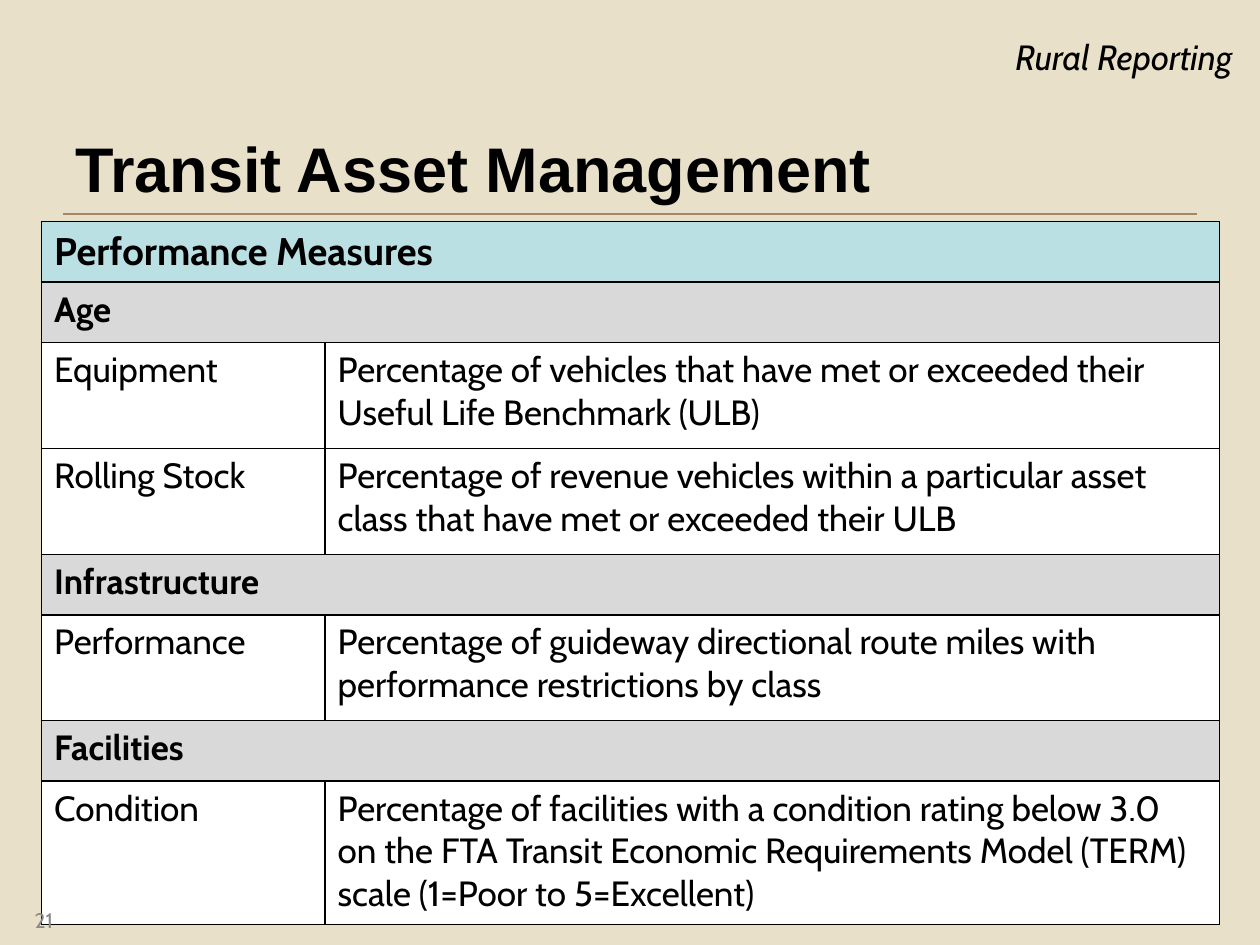
from lxml import etree
from pptx import Presentation
from pptx.dml.color import RGBColor
from pptx.enum.shapes import MSO_CONNECTOR
from pptx.enum.text import MSO_ANCHOR, PP_ALIGN
from pptx.oxml.ns import qn
from pptx.util import Inches, Pt

LEFT, RIGHT = PP_ALIGN.LEFT, PP_ALIGN.RIGHT
TOP, MIDDLE = MSO_ANCHOR.TOP, MSO_ANCHOR.MIDDLE
STRAIGHT = MSO_CONNECTOR.STRAIGHT
COLORS = {
    "background": "E9E0C9",
    "rule": "A38769",
    "text": "000000",
    "number": "898989",
    "header": "BBE0E3",
    "section": "D9D9D9",
    "measure": "FFFFFF",
    "border": "000000",
}
BODY_FONT, TITLE_FONT = "Cabin", "Arial"
COLUMN_WIDTHS = (2.25, 7.1)
MEASURES = [
    ("header", 0.48, ["Performance Measures"]),
    ("section", 0.48, ["Age"]),
    ("measure", 0.84, ["Equipment",
                       "Percentage of vehicles that have met or exceeded their "
                       "Useful Life Benchmark (ULB)"]),
    ("measure", 0.84, ["Rolling Stock",
                       "Percentage of revenue vehicles within a particular asset "
                       "class that have met or exceeded their ULB"]),
    ("section", 0.48, ["Infrastructure"]),
    ("measure", 0.84, ["Performance",
                       "Percentage of guideway directional route miles with "
                       "performance restrictions by class"]),
    ("section", 0.48, ["Facilities"]),
    ("measure", 1.14, ["Condition",
                       "Percentage of facilities with a condition rating below 3.0 "
                       "on the FTA Transit Economic Requirements Model (TERM) "
                       "scale (1=Poor to 5=Excellent)"]),
]


def color(name):
    """Return the named colour."""
    return RGBColor.from_string(COLORS[name])


def write(frame, text, size, font=BODY_FONT, ink="text", bold=False, italic=False, align=LEFT):
    """Put one formatted paragraph in a text frame."""
    frame.text = text
    para = frame.paragraphs[0]
    para.alignment = align
    span = para.runs[0]
    span.font.name = font
    span.font.size = Pt(size)
    span.font.bold = bold
    span.font.italic = italic
    span.font.color.rgb = color(ink)


def add_label(page, bounds, text, size, anchor=MIDDLE, **style):
    """Add a wrapped text box within the given bounds."""
    box = page.shapes.add_textbox(*map(Inches, bounds))
    frame = box.text_frame
    frame.word_wrap = True
    frame.vertical_anchor = anchor
    write(frame, text, size, **style)


def add_heading(page, left, top, width, height):
    """Add the title and the rule under it."""
    add_label(page, (left, top, width, height), "Transit Asset Management", 36,
              font=TITLE_FONT, bold=True)
    rule_top = Inches(top + height - 0.08)
    rule = page.shapes.add_connector(STRAIGHT, Inches(left), rule_top,
                                     Inches(left + width), rule_top)
    rule.line.color.rgb = color("rule")
    rule.line.width = Pt(1)
    etree.SubElement(rule._element.spPr, qn("a:effectLst"))


def add_borders(cell):
    """Draw a thin border on each side of a cell."""
    properties = cell._tc.get_or_add_tcPr()
    for index, side in enumerate(("a:lnL", "a:lnR", "a:lnT", "a:lnB")):
        line = etree.Element(qn(side), w=str(Pt(1)))
        fill = etree.SubElement(line, qn("a:solidFill"))
        etree.SubElement(fill, qn("a:srgbClr"), val=COLORS["border"])
        properties.insert(index, line)


def add_measures(page, left, top):
    """Add the table of performance measures."""
    heights = [height for _, height, _ in MEASURES]
    table = page.shapes.add_table(
        len(MEASURES), len(COLUMN_WIDTHS), Inches(left), Inches(top),
        Inches(sum(COLUMN_WIDTHS)), Inches(sum(heights))).table
    table.first_row = False
    table.horz_banding = False
    for column, width in zip(table.columns, COLUMN_WIDTHS):
        column.width = Inches(width)
    for row, (kind, height, texts) in zip(table.rows, MEASURES):
        row.height = Inches(height)
        cells = list(row.cells)
        for cell in cells:
            cell.fill.solid()
            cell.fill.fore_color.rgb = color(kind)
            add_borders(cell)
        if len(texts) == 1:
            cells[0].merge(cells[-1])
        for cell, text in zip(cells, texts):
            write(cell.text_frame, text, 22 if kind == "header" else 20,
                  bold=kind != "measure")


def main():
    """Build the slide and save it."""
    deck = Presentation()
    deck.slide_width, deck.slide_height = Inches(10), Inches(7.5)
    page = deck.slides.add_slide(deck.slide_layouts[6])
    page.background.fill.solid()
    page.background.fill.fore_color.rgb = color("background")
    add_label(page, (5.55, 0.23, 4.39, 0.44), "Rural Reporting ", 20, anchor=TOP,
              italic=True, align=RIGHT)
    add_heading(page, 0.5, 0.88, 9, 0.9)
    add_measures(page, 0.33, 1.76)
    add_label(page, (0, 7.1, 0.52, 0.4), "21", 12, ink="number", align=RIGHT)
    deck.save("out.pptx")


if __name__ == "__main__":
    main()
